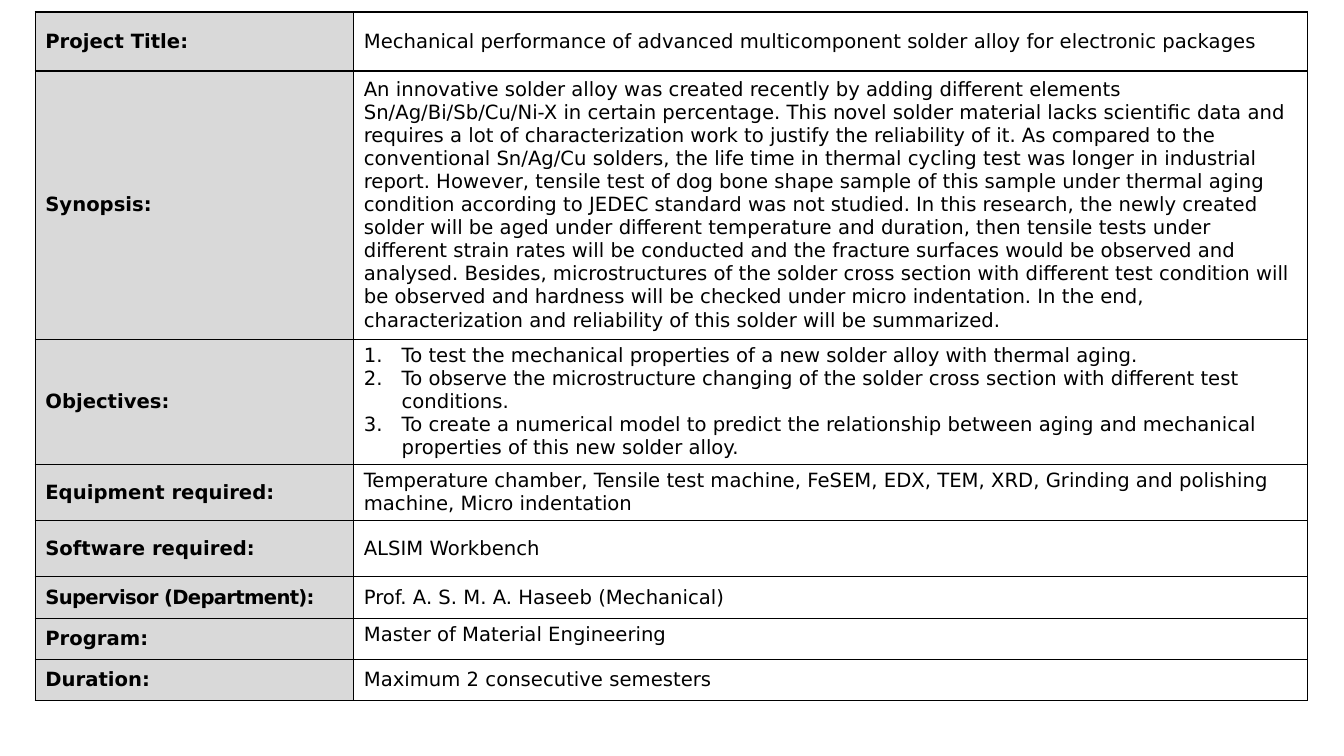
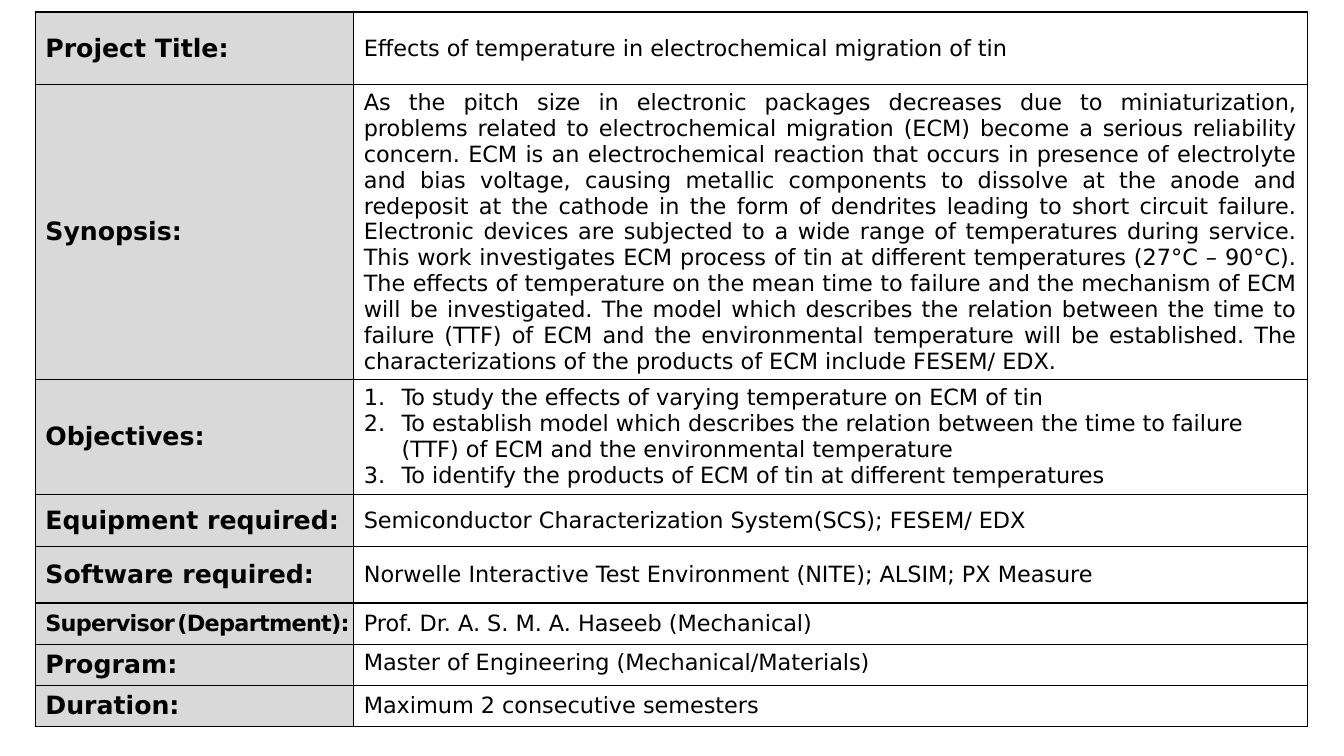
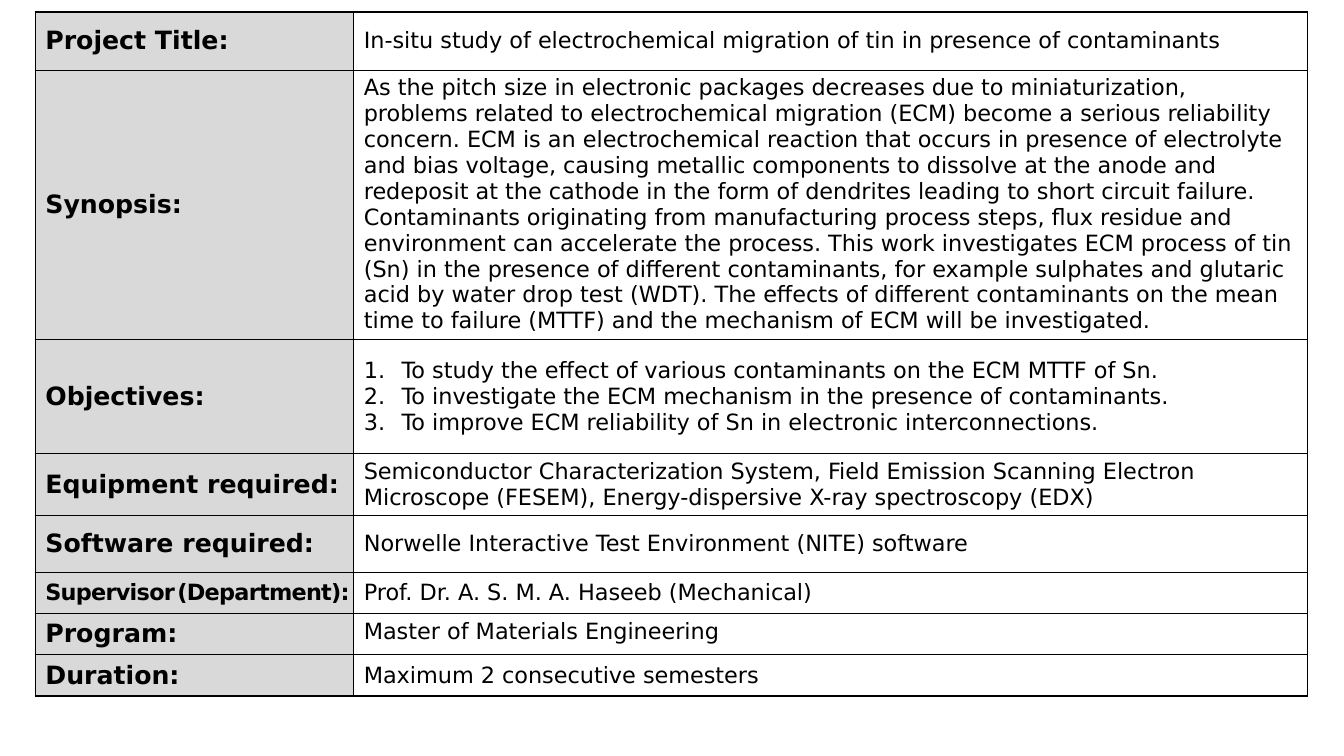
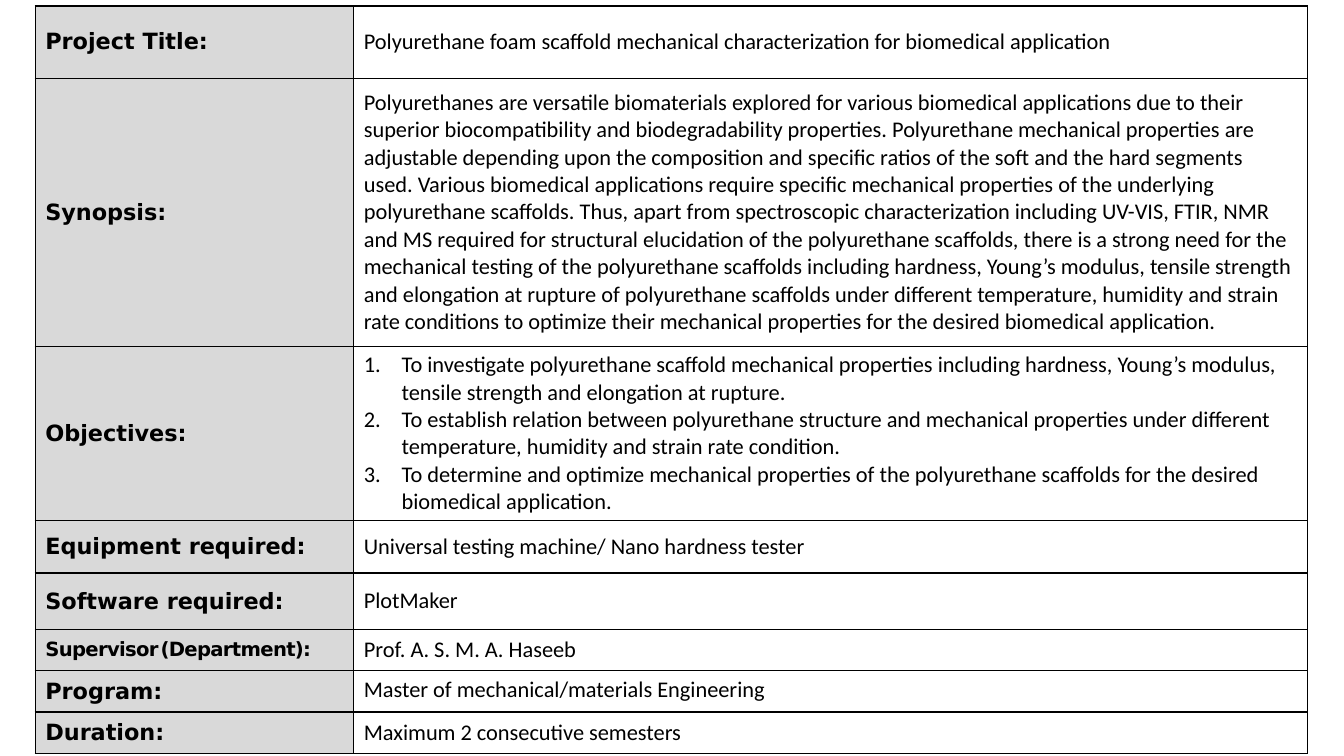
from lxml import etree
from pptx import Presentation
from pptx.dml.color import RGBColor
from pptx.enum.text import MSO_ANCHOR, PP_ALIGN
from pptx.oxml.ns import qn
from pptx.util import Pt

LEFT, JUSTIFY = PP_ALIGN.LEFT, PP_ALIGN.JUSTIFY
TOP, MIDDLE = MSO_ANCHOR.TOP, MSO_ANCHOR.MIDDLE

COLORS = {"text": "000000", "border": "000000", "label": "D9D9D9", "page": "FFFFFF"}
LABEL_FONT = "DejaVu Sans"
TABLE_LEFT = 25.2
COLUMN_WIDTHS = (227.5, 681.1)
LOWER_ROW_HEIGHTS = (191.5, 82, 37.4, 40.3, 29.5, 29.5, 29.5)
NUMBER_INDENT = 27

FIELDS = (
    ("Project Title:", "title"),
    ("Synopsis:", "synopsis"),
    ("Objectives:", "objectives"),
    ("Equipment required:", "equipment"),
    ("Software required:", "software"),
    ("Supervisor (Department):", "supervisor"),
    ("Program:", "program"),
    ("Duration:", "duration"),
)
DURATION = "Maximum 2 consecutive semesters"

ECM_BACKGROUND = (
    "As the pitch size in electronic packages decreases due to miniaturization, problems "
    "related to electrochemical migration (ECM) become a serious reliability concern. ECM is "
    "an electrochemical reaction that occurs in presence of electrolyte and bias voltage, "
    "causing metallic components to dissolve at the anode and redeposit at the cathode in the "
    "form of dendrites leading to short circuit failure."
)

# Sizes: label, value, supervisor label, gap inside the supervisor label
PROJECTS = (
    {
        "top": 8.6, "title_height": 42.2, "sizes": (14, 14, 14, 14),
        "title": "Mechanical performance of advanced multicomponent solder alloy for "
                 "electronic packages",
        "synopsis": " ".join((
            "An innovative solder alloy was created recently by adding different elements "
            "Sn/Ag/Bi/Sb/Cu/Ni-X in certain percentage. This novel solder material lacks "
            "scientific data and requires a lot of characterization work to justify the "
            "reliability of it.",
            "As compared to the conventional Sn/Ag/Cu solders, the life time in thermal cycling "
            "test was longer in industrial report. However, tensile test of dog bone shape "
            "sample of this sample under thermal aging condition according to JEDEC standard "
            "was not studied.",
            "In this research, the newly created solder will be aged under different "
            "temperature and duration, then tensile tests under different strain rates will be "
            "conducted and the fracture surfaces would be observed and analysed.",
            "Besides, microstructures of the solder cross section with different test condition "
            "will be observed and hardness will be checked under micro indentation. In the end, "
            "characterization and reliability of this solder will be summarized.",
        )),
        "objectives": (
            "To test the mechanical properties of a new solder alloy with thermal aging.",
            "To observe the microstructure changing of the solder cross section with different "
            "test conditions.",
            "To create a numerical model to predict the relationship between aging and "
            "mechanical properties of this new solder alloy.",
        ),
        "equipment": "Temperature chamber, Tensile test machine, FeSEM, EDX, TEM, XRD, Grinding "
                     "and polishing machine, Micro indentation",
        "software": "ALSIM Workbench",
        "supervisor": "Prof. A. S. M. A. Haseeb (Mechanical)",
        "program": "Master of Material Engineering",
    },
    {
        "top": 8.6, "title_height": 52, "sizes": (18, 16, 16, 5), "synopsis_align": JUSTIFY,
        "title": "Effects of temperature in electrochemical migration of tin",
        "synopsis": " ".join((
            ECM_BACKGROUND,
            "Electronic devices are subjected to a wide range of temperatures during service. "
            "This work investigates ECM process of tin at different temperatures (27°C – 90°C).",
            "The effects of temperature on the mean time to failure and the mechanism of ECM "
            "will be investigated. The model which describes the relation between the time to "
            "failure (TTF) of ECM and the environmental temperature will be established. The "
            "characterizations of the products of ECM include FESEM/ EDX.",
        )),
        "objectives": (
            "To study the effects of varying temperature on ECM of tin",
            "To establish model which describes the relation between the time to failure (TTF) "
            "of ECM and the environmental temperature",
            "To identify the products of ECM of tin at different temperatures",
        ),
        "equipment": "Semiconductor Characterization System(SCS); FESEM/ EDX",
        "software": "Norwelle Interactive Test Environment (NITE); ALSIM; PX Measure",
        "supervisor": "Prof. Dr. A. S. M. A. Haseeb (Mechanical)",
        "program": "Master of Engineering (Mechanical/Materials)",
    },
    {
        "top": 8.6, "title_height": 41.6, "sizes": (18, 16, 16, 5),
        "title": "In-situ study of electrochemical migration of tin in presence of contaminants",
        "synopsis": " ".join((
            ECM_BACKGROUND,
            "Contaminants originating from manufacturing process steps, flux residue and "
            "environment can accelerate the process.",
            "This work investigates ECM process of tin (Sn) in the presence of different "
            "contaminants, for example sulphates and glutaric acid by water drop test (WDT). "
            "The effects of different contaminants on the mean time to failure (MTTF) and the "
            "mechanism of ECM will be investigated.",
        )),
        "objectives": (
            "To study the effect of various contaminants on the ECM MTTF of Sn.",
            "To investigate the ECM mechanism in the presence of contaminants.",
            "To improve ECM reliability of Sn in electronic interconnections.",
        ),
        "equipment": "Semiconductor Characterization System, Field Emission Scanning Electron "
                     "Microscope (FESEM), Energy-dispersive X-ray spectroscopy (EDX)",
        "software": "Norwelle Interactive Test Environment (NITE) software",
        "supervisor": "Prof. Dr. A. S. M. A. Haseeb (Mechanical)",
        "program": "Master of Materials Engineering",
    },
    {
        "top": 4.3, "title_height": 51.6, "sizes": (16, 16, 14, 4), "value_font": "Calibri",
        "title": "Polyurethane foam scaffold mechanical characterization for biomedical "
                 "application",
        "synopsis": " ".join((
            "Polyurethanes are versatile biomaterials explored for various biomedical "
            "applications due to their superior biocompatibility and biodegradability "
            "properties.",
            "Polyurethane mechanical properties are adjustable depending upon the composition "
            "and specific ratios of the soft and the hard segments used. Various biomedical "
            "applications require specific mechanical properties of the underlying polyurethane "
            "scaffolds.",
            "Thus, apart from spectroscopic characterization including UV-VIS, FTIR, NMR and MS "
            "required for structural elucidation of the polyurethane scaffolds, there is a "
            "strong need for the mechanical testing of the polyurethane scaffolds including "
            "hardness, Young’s modulus, tensile strength and elongation at rupture of "
            "polyurethane scaffolds under different temperature, humidity and strain rate "
            "conditions to optimize their mechanical properties for the desired biomedical "
            "application.",
        )),
        "objectives": (
            "To investigate polyurethane scaffold mechanical properties including hardness, "
            "Young’s modulus, tensile strength and elongation at rupture.",
            "To establish relation between polyurethane structure and mechanical properties "
            "under different temperature, humidity and strain rate condition.",
            "To determine and optimize mechanical properties of the polyurethane scaffolds for "
            "the desired biomedical application.",
        ),
        "equipment": "Universal testing machine/ Nano hardness tester",
        "software": "PlotMaker",
        "supervisor": "Prof. A. S. M. A. Haseeb",
        "program": "Master of mechanical/materials Engineering",
    },
)


class ProjectDeck:
    def __init__(self):
        self.presentation = Presentation()
        self.presentation.slide_width, self.presentation.slide_height = Pt(960), Pt(540)
        self.slide = None

    def add_slide(self):
        self.slide = self.presentation.slides.add_slide(self.presentation.slide_layouts[6])
        fill = self.slide.background.fill
        fill.solid()
        fill.fore_color.rgb = RGBColor.from_string(COLORS["page"])

    def add_grid(self, top, row_heights):
        frame = self.slide.shapes.add_table(
            len(row_heights), len(COLUMN_WIDTHS), Pt(TABLE_LEFT), Pt(top),
            Pt(sum(COLUMN_WIDTHS)), Pt(sum(row_heights)))
        grid = frame.table
        grid.first_row = grid.horz_banding = False
        for column, width in zip(grid.columns, COLUMN_WIDTHS):
            column.width = Pt(width)
        for row, height in zip(grid.rows, row_heights):
            row.height = Pt(height)
            for cell in row.cells:
                self.add_borders(cell)
        return grid

    def add_borders(self, cell):
        properties = cell._tc.get_or_add_tcPr()
        for side in ("a:lnL", "a:lnR", "a:lnT", "a:lnB"):
            line = etree.SubElement(properties, qn(side), w=str(Pt(1)))
            fill = etree.SubElement(line, qn("a:solidFill"))
            etree.SubElement(fill, qn("a:srgbClr"), val=COLORS["border"])

    def add_run(self, paragraph, text, size, font=LABEL_FONT, bold=False, spacing=0):
        run = paragraph.add_run()
        run.text = text
        run.font.size, run.font.name, run.font.bold = Pt(size), font, bold
        run.font.color.rgb = RGBColor.from_string(COLORS["text"])
        if spacing:
            run.font._element.set("spc", str(round(spacing * 100)))

    def number(self, paragraph):
        properties = paragraph._p.get_or_add_pPr()
        properties.set("marL", str(Pt(NUMBER_INDENT)))
        properties.set("indent", str(-Pt(NUMBER_INDENT)))
        etree.SubElement(properties, qn("a:buAutoNum"), type="arabicPeriod")

    def fill_label(self, cell, pieces, spacing=0):
        """Write (text, size) pieces into a shaded label cell."""
        cell.fill.solid()
        cell.fill.fore_color.rgb = RGBColor.from_string(COLORS["label"])
        cell.vertical_anchor = MIDDLE
        for text, size in pieces:
            self.add_run(cell.text_frame.paragraphs[0], text, size, bold=True, spacing=spacing)

    def fill_value(self, cell, content, size, font, align=LEFT, anchor=MIDDLE):
        """Write a text, or a tuple of texts as a numbered list."""
        cell.fill.background()
        cell.vertical_anchor = anchor
        numbered = isinstance(content, tuple)
        for index, text in enumerate(content if numbered else (content,)):
            frame = cell.text_frame
            paragraph = frame.add_paragraph() if index else frame.paragraphs[0]
            paragraph.alignment = align
            if numbered:
                self.number(paragraph)
            self.add_run(paragraph, text, size, font)

    def add_project(self, project):
        self.add_slide()
        label_size, value_size, supervisor_size, gap_size = project["sizes"]
        grid = self.add_grid(project["top"], (project["title_height"], *LOWER_ROW_HEIGHTS))
        for row, (label, field) in enumerate(FIELDS):
            label_cell, value_cell = grid.cell(row, 0), grid.cell(row, 1)
            if field == "supervisor":
                label_cell.margin_right = 0
                role, gap, department = label.partition(" ")
                self.fill_label(label_cell, ((role, supervisor_size), (gap, gap_size),
                                             (department, supervisor_size)), spacing=-0.5)
            else:
                self.fill_label(label_cell, ((label, label_size),))
            self.fill_value(
                value_cell, project.get(field, DURATION), value_size,
                project.get("value_font", LABEL_FONT),
                align=project.get(f"{field}_align", LEFT),
                anchor=TOP if field == "program" else MIDDLE)


def main():
    deck = ProjectDeck()
    for project in PROJECTS:
        deck.add_project(project)
    deck.presentation.save("out.pptx")


if __name__ == "__main__":
    main()
